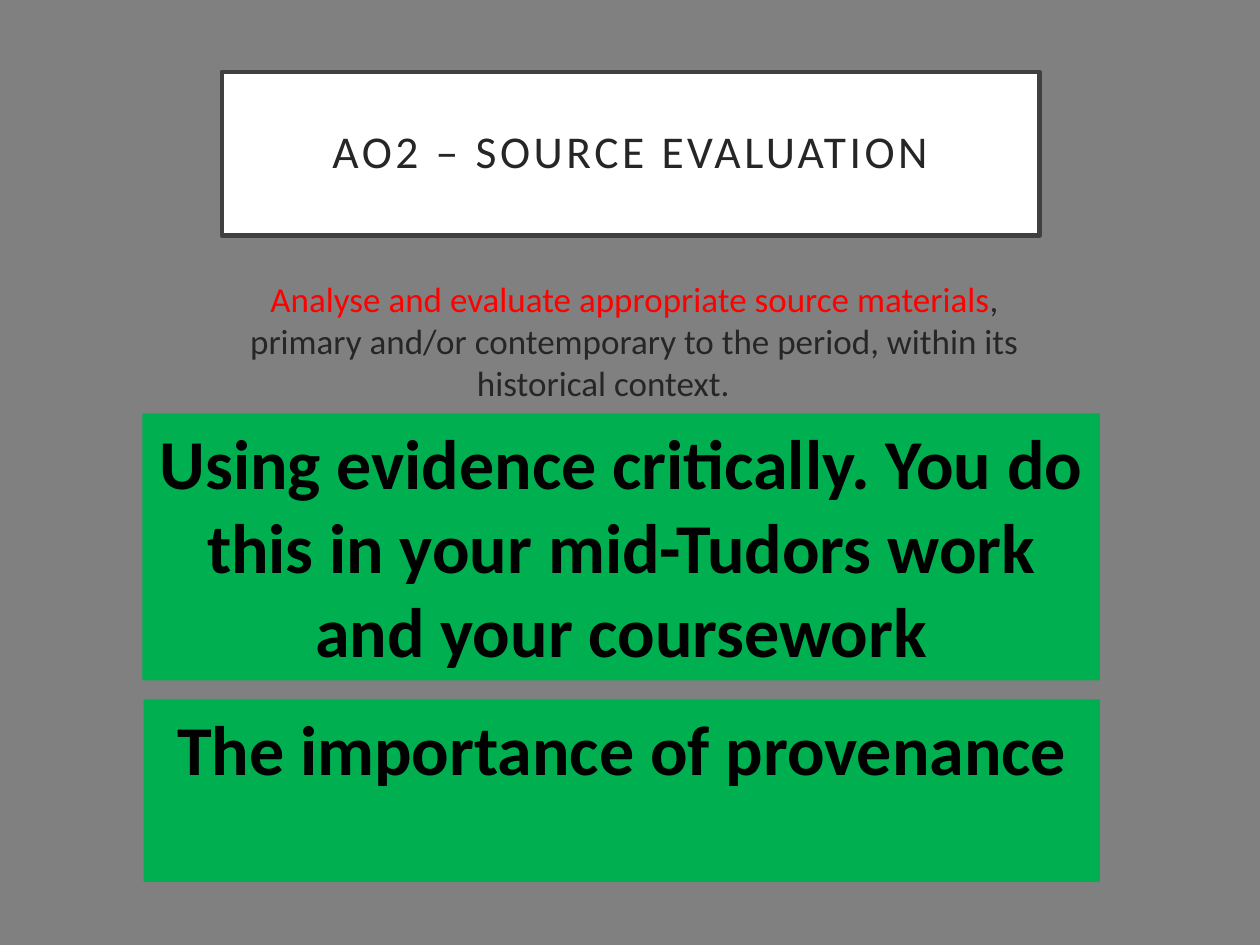
"""Build the AO2 source evaluation slide."""
from pptx import Presentation
from pptx.dml.color import RGBColor
from pptx.enum.shapes import MSO_SHAPE
from pptx.enum.text import MSO_ANCHOR, PP_ALIGN
from pptx.util import Pt

GREY = RGBColor(0x80, 0x80, 0x80)
WHITE = RGBColor(0xFF, 0xFF, 0xFF)
BORDER = RGBColor(0x40, 0x40, 0x40)
DARK = RGBColor(0x26, 0x26, 0x26)
RED = RGBColor(0xFF, 0x00, 0x00)
GREEN = RGBColor(0x00, 0xB0, 0x50)
BLACK = RGBColor(0x00, 0x00, 0x00)
FONT = "Calibri"

TITLE = "AO2 – SOURCE EVALUATION"
TITLE_BOX = (126.72, 41.04, 467.28, 93.6)
OBJECTIVE = [
    ("Analyse and evaluate appropriate source materials", RED, 20),
    (", primary and/or contemporary to the period, within its historical context. ", DARK, 20),
    ("\t", DARK, 18),
]
OBJECTIVE_BOX = (128.88, 154.8, 467.28, 244.08)
PANELS = [
    ("Using evidence critically. You do this in your mid-Tudors work and your coursework",
     (81.36, 236.16, 547.2, 152.64)),
    ("The importance of provenance", (82.08, 399.6, 546.48, 104.4)),
]


def place(s, box):
    s.left, s.top, s.width, s.height = map(Pt, box)


def add_run(p, text, size, color, bold=False):
    r = p.add_run()
    r.text = text
    r.font.name, r.font.size, r.font.bold = FONT, Pt(size), bold
    r.font.color.rgb = color
    return r


def first_paragraph(s, anchor=MSO_ANCHOR.TOP):
    tf = s.text_frame
    tf.word_wrap = True
    tf.vertical_anchor = anchor
    p = tf.paragraphs[0]
    p.alignment = PP_ALIGN.CENTER
    return p


def add_title(slide):
    s = slide.shapes.title
    place(s, TITLE_BOX)
    s.fill.solid()
    s.fill.fore_color.rgb = WHITE
    s.line.color.rgb = BORDER
    s.line.width = Pt(2.5)
    p = first_paragraph(s, MSO_ANCHOR.MIDDLE)
    p.line_spacing = 0.9
    tf = s.text_frame
    tf.margin_left = tf.margin_right = tf.margin_top = tf.margin_bottom = Pt(14.4)
    r = add_run(p, TITLE, 26, DARK)
    r.font._element.set("spc", "200")


def add_objective(slide):
    s = slide.shapes.add_textbox(*map(Pt, OBJECTIVE_BOX))
    p = first_paragraph(s)
    p.space_before = Pt(10)
    for text, color, size in OBJECTIVE:
        add_run(p, text, size, color)


def add_panel(slide, text, box):
    s = slide.shapes.add_shape(MSO_SHAPE.RECTANGLE, *map(Pt, box))
    s.shadow.inherit = False
    s.fill.solid()
    s.fill.fore_color.rgb = GREEN
    s.line.fill.background()
    add_run(first_paragraph(s), text, 40, BLACK, True)


def main():
    prs = Presentation()
    prs.slide_width, prs.slide_height = Pt(720), Pt(540)
    slide = prs.slides.add_slide(prs.slide_layouts[5])
    slide.background.fill.solid()
    slide.background.fill.fore_color.rgb = GREY
    add_title(slide)
    add_objective(slide)
    for text, box in PANELS:
        add_panel(slide, text, box)
    prs.save("out.pptx")


if __name__ == "__main__":
    main()
